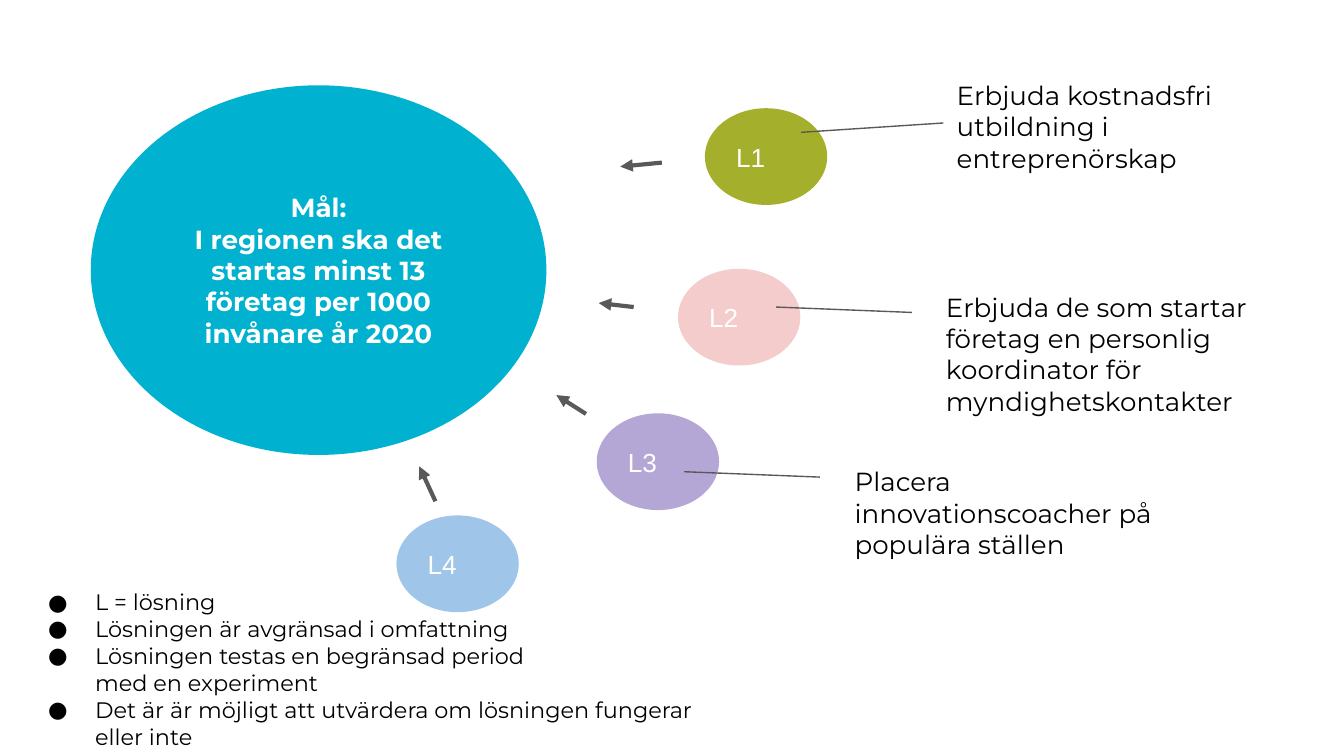
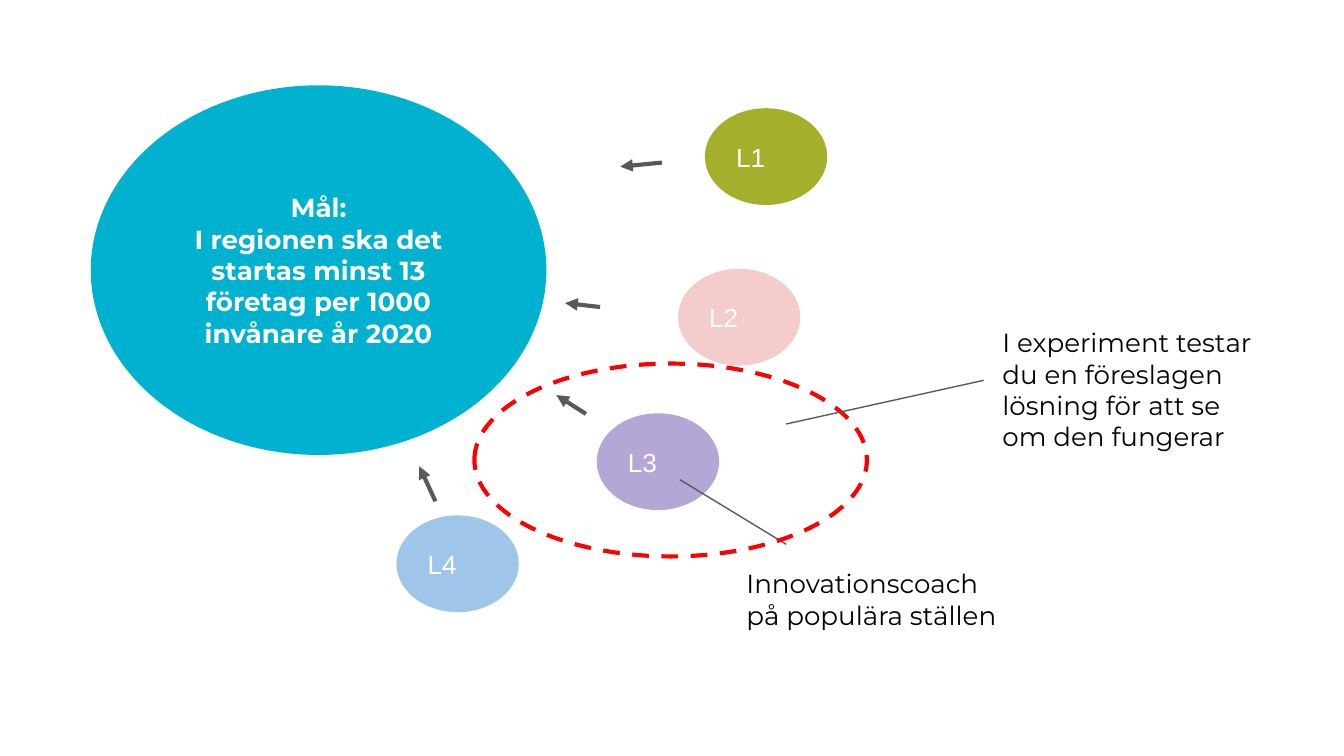
from lxml import etree
from pptx import Presentation
from pptx.dml.color import RGBColor
from pptx.enum.dml import MSO_LINE
from pptx.enum.shapes import MSO_CONNECTOR, MSO_SHAPE
from pptx.enum.text import MSO_ANCHOR, PP_ALIGN
from pptx.oxml.ns import qn
from pptx.util import Pt

PX = 4572
BLANK_LAYOUT = 6
OVAL = MSO_SHAPE.OVAL
STRAIGHT = MSO_CONNECTOR.STRAIGHT
DASH = MSO_LINE.DASH
TOP, MIDDLE = MSO_ANCHOR.TOP, MSO_ANCHOR.MIDDLE
LEFT, CENTER = PP_ALIGN.LEFT, PP_ALIGN.CENTER

BODY_FONT, LABEL_FONT = "Montserrat", "Arial"
BLACK, WHITE, GREY, RED, CYAN = "000000", "FFFFFF", "595959", "FF0000", "00B1D0"
OLIVE, PINK, PURPLE, BLUE = "92A000", "F4CCCC", "B4A7D6", "9FC5E8"

GOAL_BOX = (135, 127, 678, 550)
GOAL = "Mål:\nI regionen ska det startas minst 13 företag per 1000 invånare år 2020"
SOLUTION_SIZE = (182, 144)
SOLUTIONS = [
    ("L1", (1049, 161), OLIVE, 83, (-64, 81, -126, 87)),
    ("L2", (1009, 400), PINK, 100, (-66, 57, -118, 51)),
    ("L3", (888, 615), PURPLE, 100, (-16, 1, -60, -27)),
    ("L4", (590, 767), BLUE, 100, (58, -21, 34, -73)),
]
PROPOSALS = [
    ("Erbjuda kostnadsfri utbildning i entreprenörskap",
     (1404, 98, 424, 288), (0, 85, -212, 99)),
    ("Erbjuda de som startar företag en personlig koordinator för myndighetskontakter",
     (1388, 413, 506, 288), (-31, 52, -233, 44)),
    ("Placera innovationscoacher på populära ställen",
     (1252, 673, 484, 288), (-32, 37, -234, 29)),
]
CRITERIA_BOX = (22, 856, 1048, 248)
CRITERIA = [
    "L = lösning",
    "Lösningen är avgränsad i omfattning",
    "Lösningen testas en begränsad period \nmed en experiment",
    "Det är är möjligt att utvärdera om lösningen fungerar eller inte",
]
EXPERIMENT_BOX = (706, 541, 584, 287)
COACH = ("Innovationscoach på populära ställen",
         (1091, 825, 424, 288), (79, -15, -79, -111))
EXPERIMENT = ("I experiment testar du en föreslagen lösning för att se om den fungerar",
              (1472, 466, 424, 288), (-8, 100, -302, 165))


def px(*lengths):
    """Turn px lengths into EMU."""
    return [length * PX for length in lengths]


def paint(color_format, color):
    """Set a colour format to a hex colour."""
    color_format.rgb = RGBColor.from_string(color)


def add_bullet(paragraph, size):
    """Give a paragraph a black dot and a hanging indent."""
    properties = paragraph._p.get_or_add_pPr()
    indent, hanging = px(100, -70)
    properties.set("marL", str(indent))
    properties.set("indent", str(hanging))
    bullet_color = etree.SubElement(properties, qn("a:buClr"))
    etree.SubElement(bullet_color, qn("a:srgbClr"), val=BLACK)
    etree.SubElement(properties, qn("a:buSzPts"), val=str(size * 100))
    etree.SubElement(properties, qn("a:buFont"), typeface=BODY_FONT)
    etree.SubElement(properties, qn("a:buChar"), char="●")


def write(frame, texts, size=14, color=BLACK, font=BODY_FONT, bold=False,
          align=LEFT, anchor=TOP, bulleted=False):
    """Fill a text frame with one paragraph per text."""
    frame.word_wrap = True
    frame.vertical_anchor = anchor
    frame.margin_left, frame.margin_top, frame.margin_right, frame.margin_bottom = px(20, 20, 20, 20)
    for index, text in enumerate(texts):
        paragraph = frame.add_paragraph() if index else frame.paragraphs[0]
        paragraph.text = text
        paragraph.alignment = align
        if bulleted:
            add_bullet(paragraph, size)
        for run in paragraph.runs:
            run.font.name = font
            run.font.size = Pt(size)
            run.font.bold = bold
            paint(run.font.color, color)


def add_line(slide, origin, offsets, width, arrow=False):
    """Draw a line between two offsets from an origin."""
    left, top = origin
    x1, y1, x2, y2 = offsets
    line = slide.shapes.add_connector(
        STRAIGHT, *px(left + x1, top + y1, left + x2, top + y2))
    paint(line.line.color, GREY)
    line.line.width = Pt(width)
    if arrow:
        etree.SubElement(line.line._get_or_add_ln(), qn("a:tailEnd"), type="triangle")
    etree.SubElement(line._element.spPr, qn("a:effectLst"))


def add_oval(slide, box, fill, opacity=100):
    """Draw a borderless ellipse."""
    oval = slide.shapes.add_shape(OVAL, *px(*box))
    oval.shadow.inherit = False
    oval.fill.solid()
    paint(oval.fill.fore_color, fill)
    oval.line.fill.background()
    if opacity < 100:
        color = oval._element.spPr.find(".//" + qn("a:srgbClr"))
        etree.SubElement(color, qn("a:alpha"), val=str(opacity * 1000))
    return oval


def add_solutions(slide, arrow_shifts):
    """Draw the solutions and their arrows, some of them shifted sideways."""
    for label, corner, fill, opacity, _ in SOLUTIONS:
        oval = add_oval(slide, corner + SOLUTION_SIZE, fill, opacity)
        write(oval.text_frame, [label], color=WHITE, font=LABEL_FONT, anchor=MIDDLE)
    for label, (left, top), _, _, arrow in SOLUTIONS:
        add_line(slide, (left + arrow_shifts.get(label, 0), top), arrow, 2.25, True)


def add_goal(slide, box):
    """Draw the large goal ellipse."""
    goal = add_oval(slide, box, CYAN)
    write(goal.text_frame, [GOAL], color=WHITE, bold=True, align=CENTER, anchor=MIDDLE)


def add_note(slide, text, box, leader):
    """Place a note with a thin leader line."""
    add_line(slide, box[:2], leader, 0.75)
    write(slide.shapes.add_textbox(*px(*box)).text_frame, [text])


def add_criteria(slide, box):
    """List what makes a solution."""
    criteria = slide.shapes.add_textbox(*px(*box))
    write(criteria.text_frame, CRITERIA, size=12, bulleted=True)


def add_experiment_ring(slide, box):
    """Draw the dashed ring around the tested solution."""
    ring = slide.shapes.add_shape(OVAL, *px(*box))
    ring.shadow.inherit = False
    ring.fill.background()
    paint(ring.line.color, RED)
    ring.line.width = Pt(2.25)
    ring.line.dash_style = DASH


def build_proposals_slide(slide):
    """Show the goal with the proposed solutions."""
    add_solutions(slide, {})
    for proposal in PROPOSALS:
        add_note(slide, *proposal)
    add_criteria(slide, CRITERIA_BOX)
    add_goal(slide, GOAL_BOX)


def build_experiment_slide(slide):
    """Show the goal with the solution tested in an experiment."""
    add_solutions(slide, {"L2": -50})
    add_note(slide, *COACH)
    add_goal(slide, GOAL_BOX)
    add_experiment_ring(slide, EXPERIMENT_BOX)
    add_note(slide, *EXPERIMENT)


def main():
    """Build and save both slides."""
    deck = Presentation()
    deck.slide_width, deck.slide_height = px(2000, 1125)
    for build in (build_proposals_slide, build_experiment_slide):
        build(deck.slides.add_slide(deck.slide_layouts[BLANK_LAYOUT]))
    deck.save("out.pptx")


if __name__ == "__main__":
    main()
